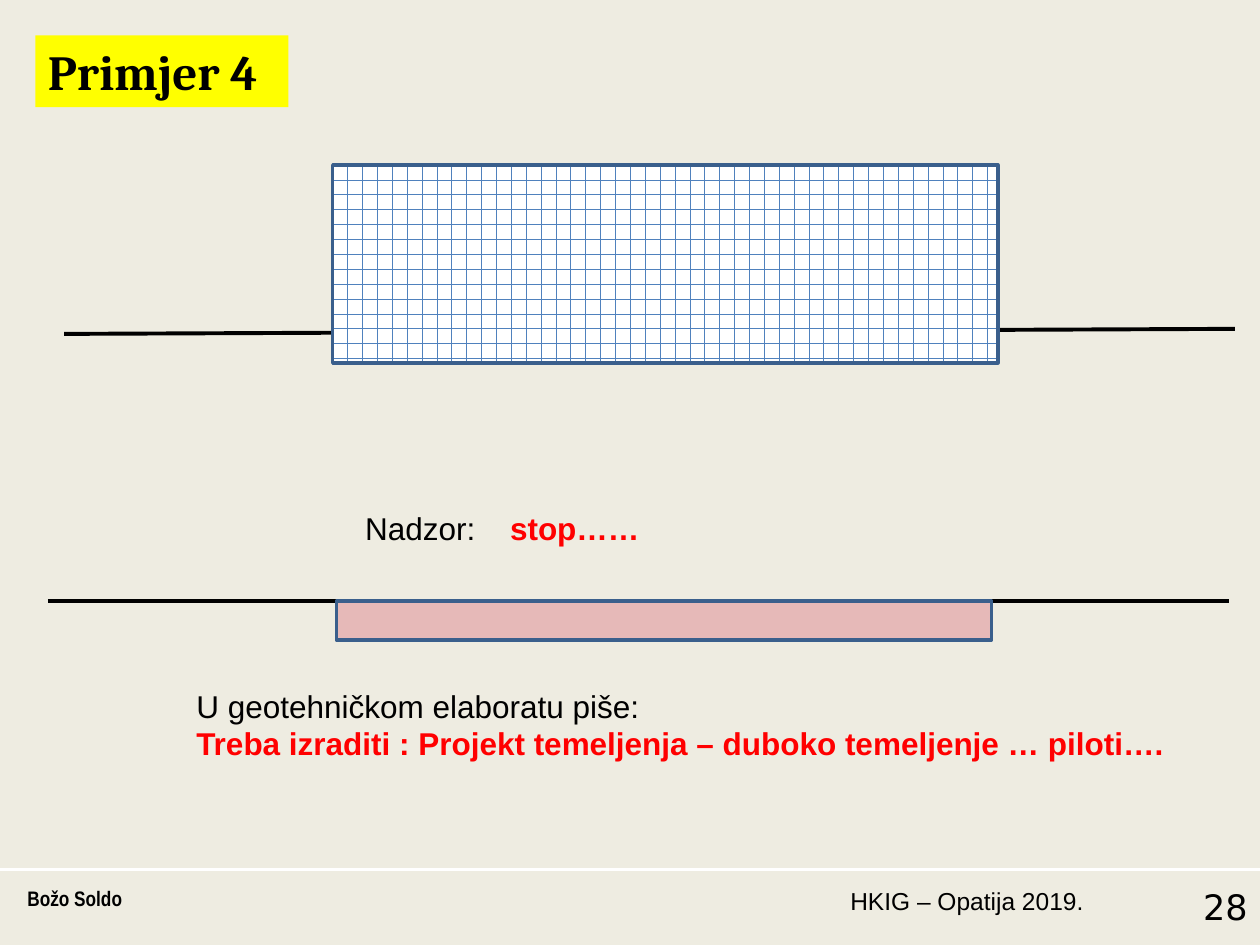
"""Build the "Primjer 4" slide about a deep foundation."""
from dataclasses import dataclass
from typing import Any

from lxml import etree
from pptx import Presentation
from pptx import util as u
from pptx.dml.color import RGBColor
from pptx.enum import dml, shapes, text
from pptx.oxml import ns

BLACK = RGBColor(0x00, 0x00, 0x00)
WHITE = RGBColor(0xFF, 0xFF, 0xFF)
RED = RGBColor(0xFF, 0x00, 0x00)
YELLOW = RGBColor(0xFF, 0xFF, 0x00)
CREAM = RGBColor(0xEE, 0xEC, 0xE1)
PINK = RGBColor(0xE6, 0xB9, 0xB8)
BLUE = RGBColor(0x4F, 0x81, 0xBD)
NAVY = RGBColor(0x3A, 0x5F, 0x8C)
LEFT, RIGHT = text.PP_ALIGN.LEFT, text.PP_ALIGN.RIGHT
PLAIN = {"name": "Arial", "size": u.Pt(18), "bold": False}
ALERT = PLAIN | {"bold": True}


@dataclass
class Run:
    words: str
    form: dict[str, Any]
    color: RGBColor = BLACK


@dataclass
class Label:
    at: tuple[float, float, float, float]
    paras: list[list[Run]]
    align: Any = LEFT
    wrap: bool = True
    tab: float = 0


@dataclass
class Rule:
    start: tuple[float, float]
    end: tuple[float, float]
    color: RGBColor = BLACK
    width: float = 2.25


def lengths(vals: tuple[float, ...]) -> list[u.Length]:
    return [u.Inches(v) for v in vals]


def write(para: Any, runs: list[Run]) -> None:
    for item in runs:
        run = para.add_run()
        run.text = item.words
        for key, val in item.form.items():
            setattr(run.font, key, val)
        run.font.color.rgb = item.color


def add_label(slide: Any, label: Label) -> None:
    frame = slide.shapes.add_textbox(*lengths(label.at)).text_frame
    frame.word_wrap = label.wrap
    for i, runs in enumerate(label.paras):
        para = frame.add_paragraph() if i else frame.paragraphs[0]
        para.alignment = label.align
        if label.tab:
            props = para._p.get_or_add_pPr()
            stops = etree.SubElement(props, ns.qn("a:tabLst"))
            etree.SubElement(stops, ns.qn("a:tab"), pos=str(u.Inches(label.tab)), algn="l")
        write(para, runs)


def add_rule(slide: Any, rule: Rule) -> None:
    line = slide.shapes.add_connector(
        shapes.MSO_CONNECTOR.STRAIGHT, *lengths(rule.start + rule.end))
    line.line.color.rgb = rule.color
    line.line.width = u.Pt(rule.width)
    etree.SubElement(line._element.spPr, ns.qn("a:effectLst"))


def add_block(slide: Any, at: tuple[float, float, float, float]) -> Any:
    block = slide.shapes.add_shape(shapes.MSO_SHAPE.RECTANGLE, *lengths(at))
    block.shadow.inherit = False
    block.line.color.rgb = NAVY
    block.line.width = u.Pt(2)
    return block


def set_title(slide: Any) -> None:
    title = slide.shapes.title
    spots = lengths((0.28, 0.28, 2.01, 0.57))
    for key, val in zip(("left", "top", "width", "height"), spots):
        setattr(title, key, val)
    title.fill.solid()
    title.fill.fore_color.rgb = YELLOW
    form = {"auto_size": text.MSO_AUTO_SIZE.NONE, "vertical_anchor": text.MSO_ANCHOR.TOP}
    for key, val in form.items():
        setattr(title.text_frame, key, val)
    para = title.text_frame.paragraphs[0]
    para.alignment = text.PP_ALIGN.JUSTIFY
    write(para, [Run("Primjer 4", {"name": "Cambria", "size": u.Pt(28), "bold": True})])


LABELS = [
    Label((6.57, 6.98, 2.13, 0.52),
          [[Run("HKIG – Opatija 2019.", PLAIN | {"size": u.Pt(14)})]], RIGHT),
    Label((0.12, 6.98, 6.54, 0.52),
          [[Run("Božo Soldo", {"name": "Arial Narrow", "size": u.Pt(12), "bold": True})]]),
    Label((8.78, 6.98, 1.22, 0.52),
          [[Run("28", {"name": "DejaVu Sans", "size": u.Pt(20)})]], RIGHT),
    Label((2.8, 3.99, 2.4, 0.4),
          [[Run("Nadzor:\t", PLAIN), Run("stop……", ALERT, RED)]], tab=1.15),
    Label((1.46, 5.4, 7.96, 0.71),
          [[Run("U geotehničkom elaboratu piše:", PLAIN)],
           [Run("Treba izraditi : Projekt temeljenja – duboko temeljenje … piloti….",
                ALERT, RED)]], wrap=False),
]


def main() -> None:
    deck = Presentation()
    deck.slide_width, deck.slide_height = lengths((10, 7.5))
    slide = deck.slides.add_slide(deck.slide_layouts[5])
    slide.background.fill.solid()
    slide.background.fill.fore_color.rgb = CREAM
    set_title(slide)

    add_rule(slide, Rule((0, 6.9), (10, 6.9), WHITE, 1.5))
    add_rule(slide, Rule((0.51, 2.65), (9.8, 2.61)))
    wall = add_block(slide, (2.64, 1.31, 5.28, 1.57)).fill
    wall.patterned()
    wall.pattern = dml.MSO_PATTERN.HORIZONTAL_BRICK
    wall.fore_color.rgb = BLUE
    wall.back_color.rgb = WHITE

    add_rule(slide, Rule((0.38, 4.77), (9.75, 4.77)))
    base = add_block(slide, (2.67, 4.77, 5.2, 0.31)).fill
    base.solid()
    base.fore_color.rgb = PINK

    for label in LABELS:
        add_label(slide, label)
    deck.save("out.pptx")


if __name__ == "__main__":
    main()
